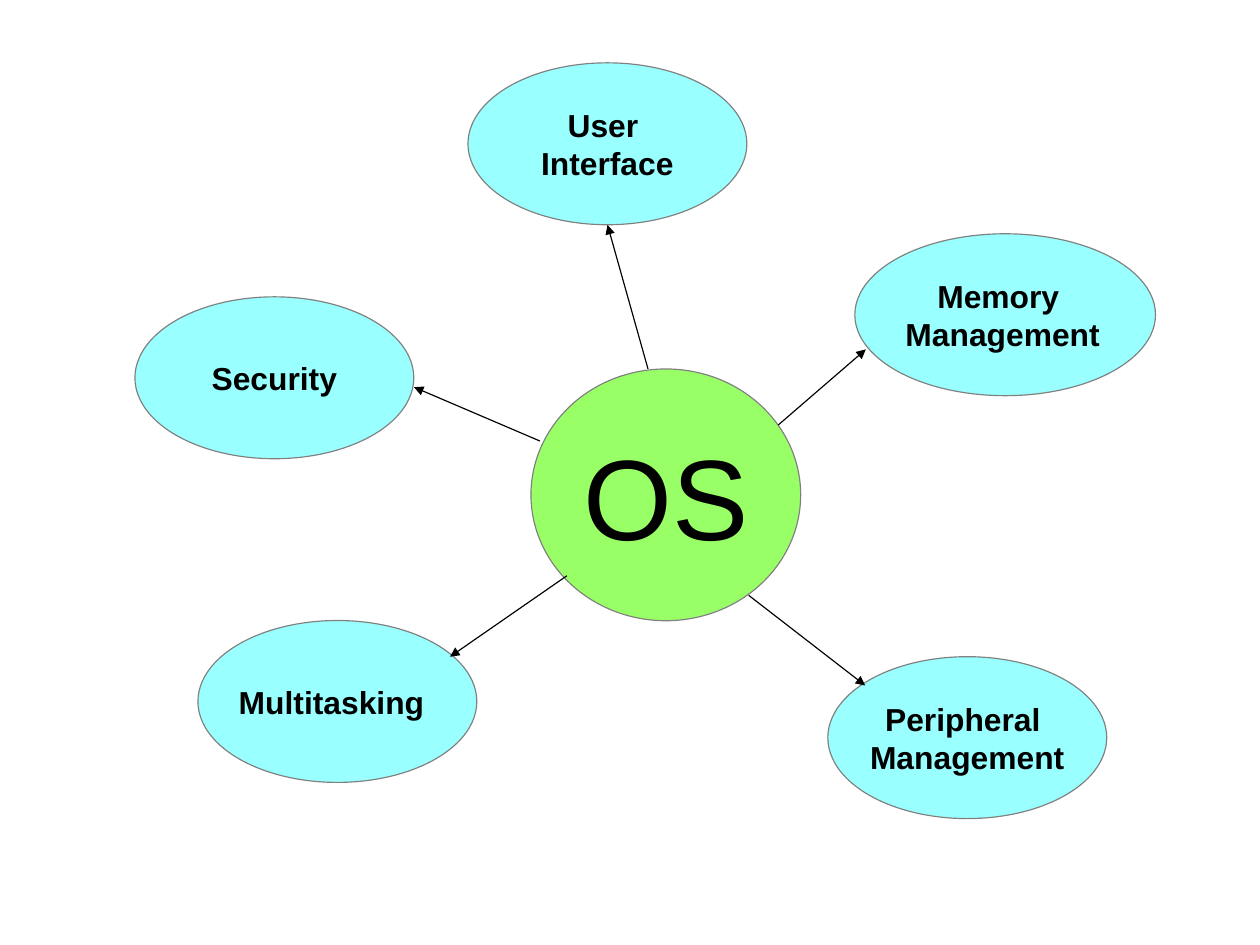
from lxml.etree import SubElement
from pptx import Presentation
from pptx.dml.color import RGBColor
from pptx.enum.shapes import MSO_CONNECTOR, MSO_SHAPE
from pptx.enum.text import MSO_ANCHOR, PP_ALIGN
from pptx.oxml.ns import qn
from pptx.util import Pt

# Content: all lengths in points
PAGE_SIZE = (793.7, 595.28)
HUB = {"lines": ["OS"], "at": (334.5, 232.4), "size": (169.9, 158.6)}
TOPIC_SIZE = (175.7, 102)
INSET = 7.2
TOPICS = [
    {"lines": ["Multitasking"], "at": (124.7, 390.9), "insets": (0, INSET),
     "align": PP_ALIGN.LEFT, "arrow": (357.1, 362.7, 283.5, 413.7)},
    {"lines": ["Security"], "at": (85, 187),
     "arrow": (340.1, 277.8, 260.8, 243.9)},
    {"lines": ["User ", "Interface"], "at": (294.8, 39.6),
     "arrow": (408.2, 232.4, 382.7, 141.7)},
    {"lines": ["Peripheral ", "Management"], "at": (521.5, 413.7), "insets": (0, 0),
     "arrow": (471.6, 375, 545, 431.8)},
    {"lines": ["Memory ", "Management"], "at": (538.5, 147.3), "size": (189.4, 102),
     "insets": (4, INSET), "arrow": (490.3, 267.7, 545.4, 220.1)},
]
HUB_FONT = {"name": "Arial", "size": Pt(72), "bold": False}
TOPIC_FONT = {"name": "Arial", "size": Pt(20), "bold": True}


def paint(target, color):
    """Give a shape, line or font one solid colour."""
    target.fill.solid()
    target.fill.fore_color.rgb = RGBColor.from_string(color)


def set_line(line, color):
    paint(line, color)
    line.width = Pt(0.75)


def add_ellipse(page, item, color, font):
    place = item["at"] + item.get("size", TOPIC_SIZE)
    shape = page.shapes.add_shape(MSO_SHAPE.OVAL, *map(Pt, place))
    shape.shadow.inherit = False
    paint(shape, color)
    set_line(shape.line, "808080")

    # Label
    box = shape.text_frame
    inset_left, inset_right = item.get("insets", (INSET, INSET))
    frame_format = {
        "word_wrap": True, "vertical_anchor": MSO_ANCHOR.MIDDLE,
        "margin_left": Pt(inset_left), "margin_right": Pt(inset_right),
        "margin_top": Pt(3.6), "margin_bottom": Pt(3.6),
    }
    for name, value in frame_format.items():
        setattr(box, name, value)
    for index, text in enumerate(item["lines"]):
        para = box.add_paragraph() if index else box.paragraphs[0]
        para.alignment = item.get("align", PP_ALIGN.CENTER)
        span = para.add_run()
        span.text = text
        for name, value in font.items():
            setattr(span.font, name, value)
        paint(span.font, "000000")


def add_arrow(page, ends):
    arrow = page.shapes.add_connector(MSO_CONNECTOR.STRAIGHT, *map(Pt, ends))
    set_line(arrow.line, "000000")
    properties = arrow._element.spPr
    SubElement(properties.find(qn("a:ln")), qn("a:tailEnd"), type="triangle")
    SubElement(properties, qn("a:effectLst"))


def main():
    deck = Presentation()
    deck.slide_width, deck.slide_height = map(Pt, PAGE_SIZE)
    page = deck.slides.add_slide(deck.slide_layouts[6])

    # Hub and topics
    add_ellipse(page, HUB, "99FF66", HUB_FONT)
    for topic in TOPICS:
        add_ellipse(page, topic, "99FFFF", TOPIC_FONT)

    # Arrows from the hub
    for topic in TOPICS:
        add_arrow(page, topic["arrow"])

    deck.save("out.pptx")


if __name__ == "__main__":
    main()
